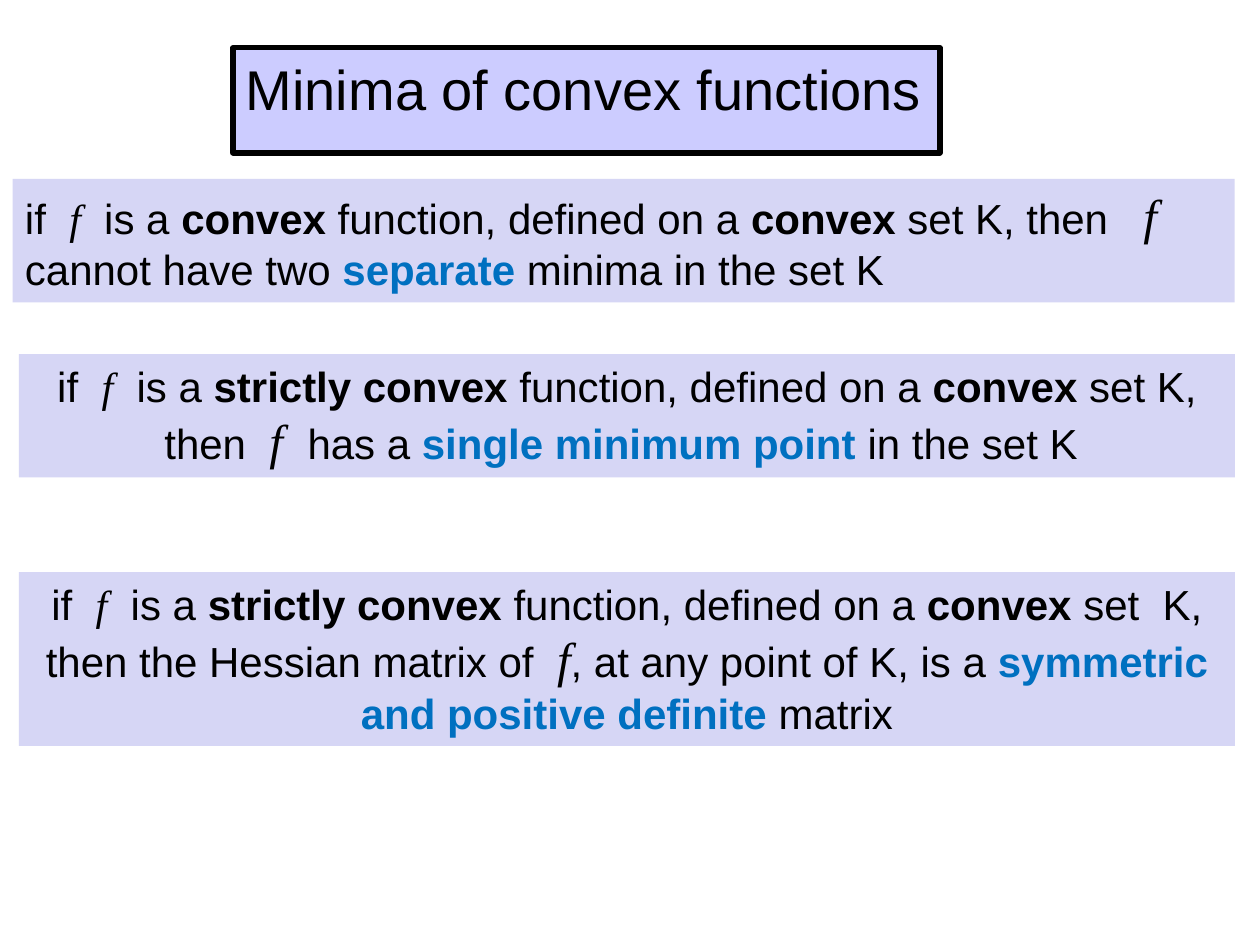
from pptx import Presentation
from pptx.dml.color import RGBColor
from pptx.enum.text import MSO_ANCHOR, MSO_AUTO_SIZE, PP_ALIGN
from pptx.util import Inches, Pt

BLACK = RGBColor(0x00, 0x00, 0x00)
BLUE = RGBColor(0x00, 0x70, 0xC0)
LAVENDER = RGBColor(0xCC, 0xCC, 0xFF)
PALE_LAVENDER = RGBColor(0xD6, 0xD6, 0xF5)

# Format values for each kind of text
PLAIN = {"name": "Arial", "size": Pt(24), "bold": False, "italic": False}
FORMATS = {
    "title": (PLAIN | {"size": Pt(32)}, BLACK),
    "plain": (PLAIN, BLACK),
    "bold": (PLAIN | {"bold": True}, BLACK),
    "key": (PLAIN | {"bold": True}, BLUE),
    "symbol": (PLAIN | {"name": "Times New Roman", "italic": True}, BLACK),
    "large symbol": (PLAIN | {"name": "Times New Roman", "italic": True, "size": Pt(28)}, BLACK),
}


def place(box, left, top, width, height, fill):
    """Set the position in inches and the fill of a box."""
    box.left, box.top, box.width, box.height = map(Inches, (left, top, width, height))
    box.fill.solid()
    box.fill.fore_color.rgb = fill


def write(box, spans, alignment, wrap):
    """Fill a box with one paragraph of (format, text) spans."""
    frame = box.text_frame
    frame.word_wrap = wrap
    frame.auto_size = MSO_AUTO_SIZE.SHAPE_TO_FIT_TEXT
    frame.vertical_anchor = MSO_ANCHOR.TOP
    para = frame.paragraphs[0]
    para.alignment = alignment
    for kind, text in spans:
        span = para.add_run()
        span.text = text
        values, color = FORMATS[kind]
        for attribute, value in values.items():
            setattr(span.font, attribute, value)
        span.font.color.rgb = color


deck = Presentation()
deck.slide_width, deck.slide_height = Inches(10), Inches(7.5)
page = deck.slides.add_slide(deck.slide_layouts[5])

# Framed title
title = page.shapes.title
place(title, 1.85, 0.38, 5.61, 0.64, LAVENDER)
title.line.color.rgb = BLACK
title.line.width = Pt(3)
write(title, [("title", "Minima of convex functions")], PP_ALIGN.LEFT, False)

# Statements: left, top, height, alignment, condition and conclusion
RIGHT_EDGE = 9.8
OPENING = [("plain", "if  "), ("symbol", "f"), ("plain", "  is a ")]
DOMAIN = [("plain", "function, defined on a "), ("bold", "convex")]
statements = [
    (0.1, 1.42, 0.98, PP_ALIGN.LEFT, "convex ", [
        ("plain", " set K, then   "), ("large symbol", "f"),
        ("plain", "  cannot have two "), ("key", "separate"),
        ("plain", " minima in the set K"),
    ]),
    (0.15, 2.81, 0.98, PP_ALIGN.CENTER, "strictly convex ", [
        ("plain", " set K, then  "), ("large symbol", "f  "),
        ("plain", "has a "), ("key", "single minimum point "),
        ("plain", "in the set K "),
    ]),
    (0.15, 4.54, 1.38, PP_ALIGN.CENTER, "strictly convex ", [
        ("plain", " set  K, then the Hessian matrix of  "), ("large symbol", "f"),
        ("plain", ", at any point of K, is a "),
        ("key", "symmetric and positive definite "), ("plain", "matrix"),
    ]),
]
for left, top, height, alignment, condition, conclusion in statements:
    box = page.shapes.add_textbox(0, 0, 0, 0)
    place(box, left, top, RIGHT_EDGE - left, height, PALE_LAVENDER)
    write(box, OPENING + [("bold", condition)] + DOMAIN + conclusion, alignment, True)

deck.save("out.pptx")
